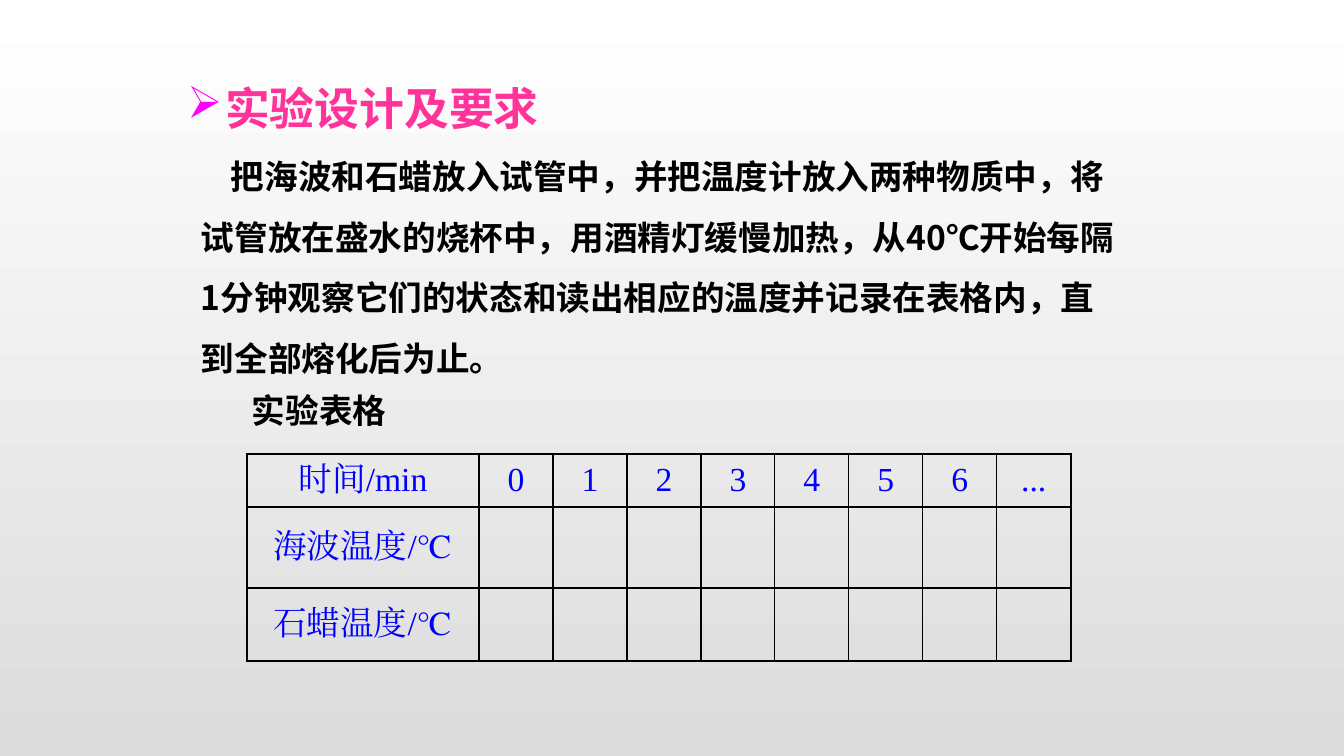
from dataclasses import dataclass

from lxml.etree import SubElement
from pptx import Presentation
from pptx.dml.color import RGBColor
from pptx.enum.text import MSO_ANCHOR, MSO_AUTO_SIZE, PP_ALIGN
from pptx.oxml.ns import qn
from pptx.util import Pt

WIDTH, HEIGHT = 1344, 756


def px(count):
    return round(count * 914400 / 100.8)


@dataclass(frozen=True)
class Theme:
    sans: str = "Noto Sans CJK SC"
    serif: str = "Times New Roman"
    black: str = "000000"
    blue: str = "0000FF"
    pink: str = "FF3399"
    magenta: str = "FF00FF"
    top: str = "FFFFFF"
    bottom: str = "DCDCDC"
    head: int = 32
    body: int = 24
    outer: float = 1.5
    inner: float = 1


THEME = Theme()
HEADING = "实验设计及要求"
STEPS = ("把海波和石蜡放入试管中，并把温度计放入两种物质中，将试管放在盛水的烧杯中，"
         "用酒精灯缓慢加热，从40℃开始每隔1分钟观察它们的状态和读出相应的温度并记录在表格内，"
         "直到全部熔化后为止。")
CAPTION = "实验表格"
LABELS = ["时间/min", "海波温度/℃", "石蜡温度/℃"]
TIMES = [*map(str, range(7)), "..."]


def style(para, size, color, face, bold=False):
    font = para.font
    font.size, font.bold, font.name = Pt(size), bold, face
    font.color.rgb = RGBColor.from_string(color)
    props = para._p.get_or_add_pPr().find(qn("a:defRPr"))
    SubElement(props, qn("a:ea"), typeface=face)


def place(shape, box):
    shape.left, shape.top, shape.width, shape.height = map(px, box)


def paint(slide):
    """Fill the background from top to bottom."""
    fill = slide.background.fill
    fill.gradient()
    fill.gradient_angle = 270
    for stop, color in zip(fill.gradient_stops, (THEME.top, THEME.bottom)):
        stop.color.rgb = RGBColor.from_string(color)


def add_heading(slide, box):
    title = slide.shapes.title
    place(title, box)
    frame = title.text_frame
    frame.text = HEADING
    frame.word_wrap = True
    frame.auto_size = MSO_AUTO_SIZE.NONE
    frame.vertical_anchor = MSO_ANCHOR.TOP
    para = frame.paragraphs[0]
    para.alignment, para.line_spacing = PP_ALIGN.LEFT, 1.2
    props = para._p.get_or_add_pPr()
    props.set("marL", str(px(38)))
    props.set("indent", str(px(-38)))
    tint = SubElement(props, qn("a:buClr"))
    SubElement(tint, qn("a:srgbClr"), val=THEME.magenta)
    SubElement(props, qn("a:buChar"), char="➢")
    style(para, THEME.head, THEME.pink, THEME.sans, True)


def add_text(slide, box, text, wrap=True, indent=0, spacing=1.0):
    frame = slide.shapes.add_textbox(*map(px, box)).text_frame
    frame.text = text
    frame.word_wrap = wrap
    para = frame.paragraphs[0]
    para.line_spacing = spacing
    para._p.get_or_add_pPr().set("indent", str(px(indent)))
    style(para, THEME.body, THEME.black, THEME.sans, True)


def add_edges(cell, edges):
    """Draw cell borders; edges maps each side to whether it is outermost."""
    props = cell._tc.get_or_add_tcPr()
    for side, outer in edges.items():
        width = Pt(THEME.outer if outer else THEME.inner)
        line = SubElement(props, qn("a:ln" + side), w=str(width))
        fill = SubElement(line, qn("a:solidFill"))
        SubElement(fill, qn("a:srgbClr"), val=THEME.black)


def add_grid(slide, box, first, heights):
    rows, cols = len(LABELS), len(TIMES) + 1
    table = slide.shapes.add_table(rows, cols, *map(px, box)).table
    table.first_row = table.horz_banding = False
    for col, column in enumerate(table.columns):
        column.width = px((box[2] - first) / len(TIMES) if col else first)
    for row, height in enumerate(heights):
        table.rows[row].height = px(height)
        texts = [LABELS[row]] + (TIMES if row == 0 else [""] * len(TIMES))
        for col, text in enumerate(texts):
            cell = table.cell(row, col)
            add_edges(cell, {"L": col == 0, "R": col == cols - 1,
                             "T": row == 0, "B": row == rows - 1})
            cell.fill.background()
            if text:
                cell.text = text
                cell.vertical_anchor = MSO_ANCHOR.MIDDLE
                para = cell.text_frame.paragraphs[0]
                para.alignment = PP_ALIGN.CENTER
                style(para, THEME.body, THEME.blue, THEME.serif)


def main():
    deck = Presentation()
    deck.slide_width, deck.slide_height = px(WIDTH), px(HEIGHT)
    slide = deck.slides.add_slide(deck.slide_layouts.get_by_name("Title Only"))
    paint(slide)
    add_heading(slide, (177, 65, 409, 67))
    add_text(slide, (191, 131, 938, 254), STEPS, indent=30, spacing=1.5)
    add_text(slide, (242, 385, 156, 50), CAPTION, wrap=False)
    add_grid(slide, (247, 454, 824, 207), 232, (53, 81, 73))
    deck.save("out.pptx")


if __name__ == "__main__":
    main()
